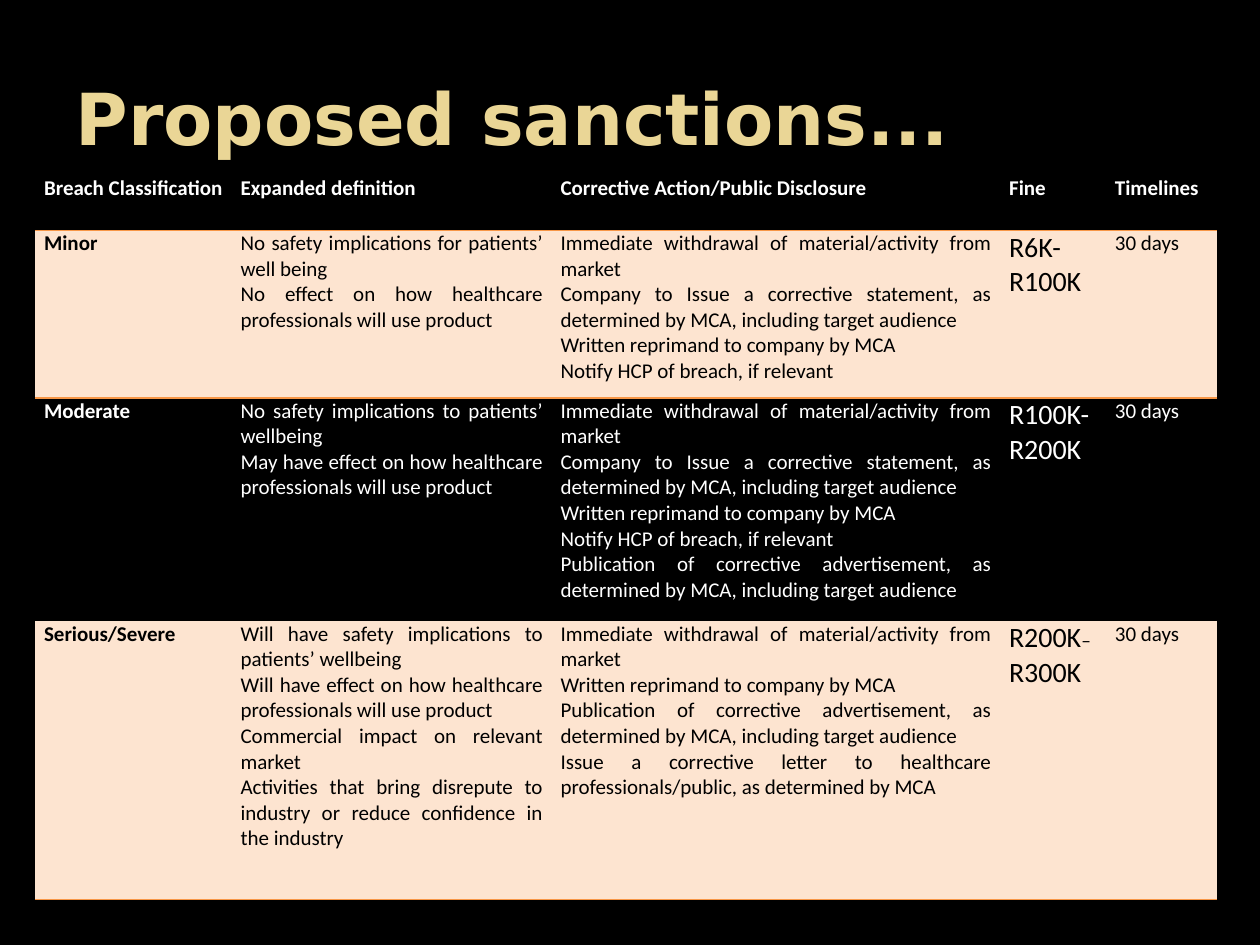
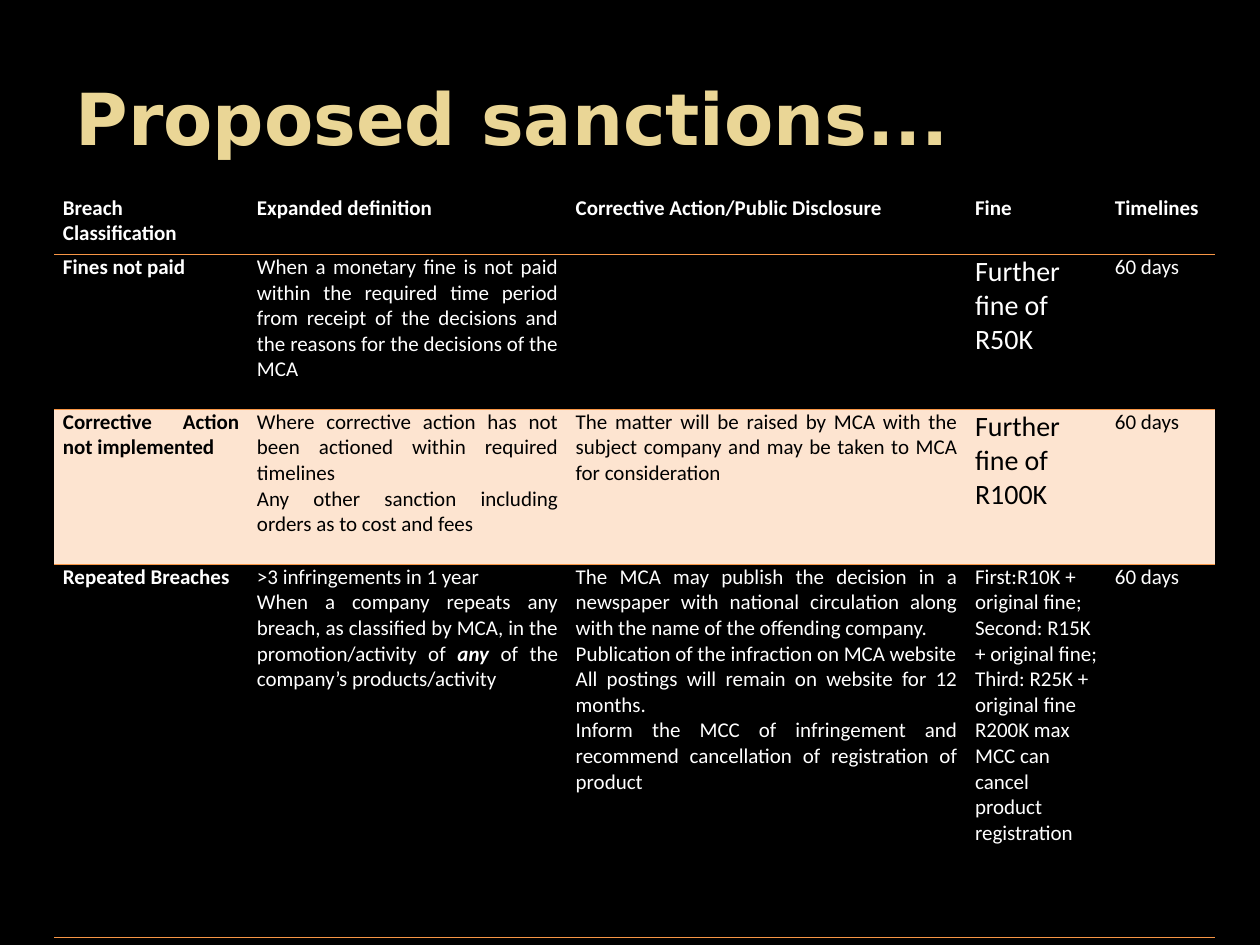
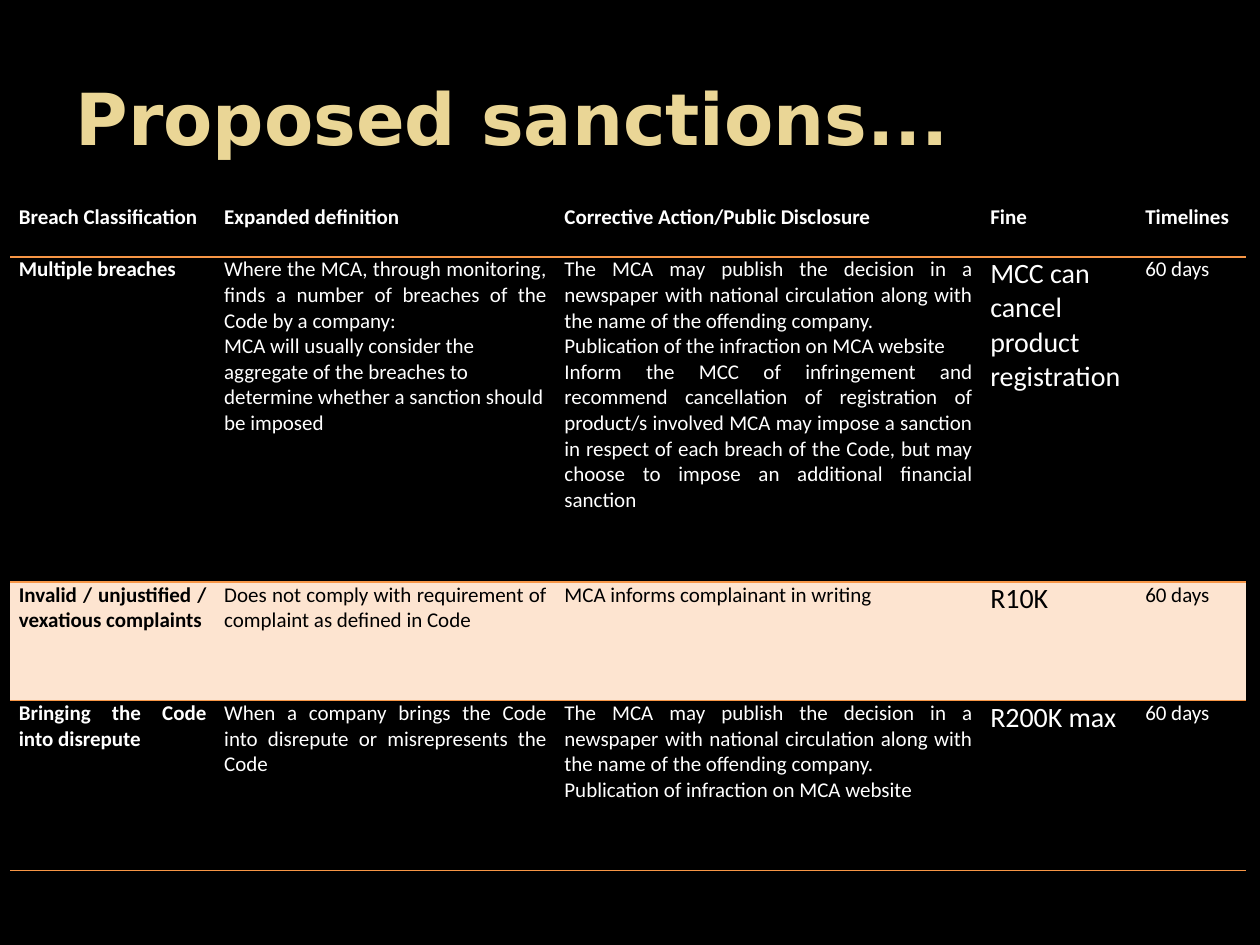
from dataclasses import dataclass
from pptx import Presentation as Deck
from pptx.dml.color import RGBColor as Rgb
from pptx.enum.text import MSO_ANCHOR as Anchor, MSO_AUTO_SIZE as Fit, PP_ALIGN as Align
from pptx.oxml import parse_xml as to_xml
from pptx.oxml.ns import nsdecls
from pptx.util import Inches, Pt

BLACK = Rgb(0x00, 0x00, 0x00)
WHITE = Rgb(0xFF, 0xFF, 0xFF)
GOLD = Rgb(0xEA, 0xD6, 0x96)
PEACH = Rgb(0xFD, 0xE4, 0xD0)
ORANGE = Rgb(0xF7, 0x96, 0x46)
PLAIN = "{2D5ABB26-0587-4C30-8999-92F81FD0307C}"
FINE = 3


@dataclass
class Para:
    runs: list
    align: Align = Align.JUSTIFY


def put(obj, form):
    for key, value in form.items():
        setattr(obj, key, value)


class Style:
    head = dict(name="DejaVu Sans", size=Pt(41), bold=True)
    body = dict(name="Calibri", size=Pt(12), bold=False)
    inset = dict(margin_left=Inches(0.07), margin_right=Inches(0.07),
                 margin_top=0, margin_bottom=0)

    def __init__(self):
        self.deck = Deck()
        put(self.deck, dict(slide_width=Inches(10), slide_height=Inches(7.5)))
        self.slide = None

    def page(self, text):
        self.slide = self.deck.slides.add_slide(self.deck.slide_layouts[5])
        back = self.slide.background.fill
        back.solid()
        back.fore_color.rgb = BLACK
        title = self.slide.shapes.title
        put(title, dict(left=Inches(0.5), top=Inches(0.3),
                        width=Inches(9), height=Inches(1.25)))
        frame = title.text_frame
        put(frame, dict(vertical_anchor=Anchor.MIDDLE, auto_size=Fit.NONE, word_wrap=True))
        para = frame.paragraphs[0]
        para.alignment = Align.LEFT
        self.run(para, text, self.head, GOLD)

    def run(self, para, text, form, tint):
        run = para.add_run()
        run.text = text
        put(run.font, form)
        run.font.color.rgb = tint

    def rule(self, cell, side):
        line = to_xml(
            f'<a:{side} {nsdecls("a")} w="12700"><a:solidFill>'
            f'<a:srgbClr val="{ORANGE}"/></a:solidFill></a:{side}>')
        cell._tc.get_or_add_tcPr().insert(0, line)

    def fill(self, cell, paras, form, align, tint):
        frame = cell.text_frame
        for num, item in enumerate(paras):
            if isinstance(item, str):
                item = Para([(item, {})], align)
            para = frame.add_paragraph() if num else frame.paragraphs[0]
            para.alignment = item.align
            for text, extra in item.runs:
                self.run(para, text, {**form, **extra}, tint)

    def table(self, left, top, cols, rows, data, bands, rules):
        frame = self.slide.shapes.add_table(
            len(rows), len(cols), Inches(left), Inches(top),
            Inches(sum(cols)), Inches(sum(rows)))
        grid = frame.table
        put(grid, dict(first_row=False, horz_banding=False))
        grid._tbl.tblPr[0].text = PLAIN
        for col, size in zip(grid.columns, cols):
            col.width = Inches(size)
        for row, size in zip(grid.rows, rows):
            row.height = Inches(size)
        for r, texts in enumerate(data):
            for c, paras in enumerate(texts):
                cell = grid.cell(r, c)
                put(cell, self.inset)
                if r in bands:
                    cell.fill.solid()
                    cell.fill.fore_color.rgb = PEACH
                else:
                    cell.fill.background()
                form = {**self.body, "bold": r == 0 or c == 0}
                if r and c == FINE:
                    form["size"] = Pt(16)
                self.fill(cell, paras, form,
                          Align.LEFT if c == FINE else Align.JUSTIFY,
                          BLACK if r in bands else WHITE)
                for edge, side in ((r + 1, "lnB"), (r, "lnT")):
                    if edge in rules:
                        self.rule(cell, side)


TITLE = "Proposed sanctions..."
HEAD = [["Breach Classification"], ["Expanded definition"],
        ["Corrective Action/Public Disclosure"], ["Fine"], ["Timelines"]]
MONTH = ["30 days"]
TERM = ["60 days"]
RECALL = "Immediate withdrawal of material/activity from market"
AMEND = ("Company to Issue a corrective statement, as determined by MCA, "
         "including target audience")
WARN = "Written reprimand to company by MCA"
NOTIFY = "Notify HCP of breach, if relevant"
ADVERT = ("Publication of corrective advertisement, as determined by MCA, "
          "including target audience")
PRESS = ("The MCA may publish the decision in a newspaper with national circulation "
         "along with the name of the offending company.")
SITE = "Publication of the infraction on MCA website"
CANCEL = "MCC can cancel product registration"
INFORM = "Inform the MCC of infringement and recommend cancellation of registration of product"
SMALL = dict(size=Pt(12))

LEVELS = [
    HEAD,
    [["Minor"],
     ["No safety implications for patients’ well being",
      "No effect on how healthcare professionals will use product"],
     [RECALL, AMEND, WARN, NOTIFY],
     ["R6K-R100K"], MONTH],
    [["Moderate"],
     ["No safety implications to patients’ wellbeing",
      "May have effect on how healthcare professionals will use product"],
     [RECALL, AMEND, WARN, NOTIFY, ADVERT],
     ["R100K-R200K"], MONTH],
    [["Serious/Severe"],
     ["Will have safety implications to patients’ wellbeing",
      "Will have effect on how healthcare professionals will use product",
      "Commercial impact on relevant market",
      "Activities that bring disrepute to industry or reduce confidence in the industry"],
     [RECALL, WARN, ADVERT,
      "Issue a corrective letter to healthcare professionals/public, as determined by MCA"],
     [Para([("R200K", {}), ("– ", dict(size=Pt(11))), ("R300K", {})], Align.LEFT)],
     MONTH],
]

REPEATS = [
    HEAD,
    [["Fines not paid"],
     ["When a monetary fine is not paid within the required time period from receipt "
      "of the decisions and the reasons for the decisions of the MCA"],
     [], ["Further fine of R50K"], TERM],
    [["Corrective Action not implemented"],
     ["Where corrective action has not been actioned within required timelines",
      "Any other sanction including orders as to cost and fees"],
     ["The matter will be raised by MCA with the subject company and may be taken "
      "to MCA for consideration"],
     ["Further fine of R100K"], TERM],
    [["Repeated Breaches"],
     [">3 infringements in 1 year",
      Para([("When a company repeats any breach, as classified by MCA, in the "
             "promotion/activity of ", {}),
            ("any", dict(bold=True, italic=True)),
            (" of the company’s products/activity", {})])],
     [PRESS + " ", SITE, "All postings will remain on website for 12 months. ", INFORM],
     [Para([("First:R10K + original fine; Second: R15K + original fine; "
             "Third: R25K + original fine R200K max", SMALL)], Align.LEFT),
      Para([(CANCEL, SMALL)], Align.LEFT)],
     TERM],
]

OTHERS = [
    HEAD,
    [["Multiple breaches"],
     ["Where the MCA, through monitoring, finds a number of breaches of the Code "
      "by a company:",
      Para([("MCA will usually consider the aggregate of the breaches to determine "
             "whether a sanction should be imposed", {})], Align.LEFT)],
     [PRESS + " ", SITE,
      INFORM + "/s involved MCA may impose a sanction in respect of each breach of the "
      "Code, but may choose to impose an additional financial sanction"],
     [CANCEL], TERM],
    [["Invalid / unjustified / vexatious complaints"],
     ["Does not comply with requirement of complaint as defined in Code"],
     ["MCA informs complainant in writing"],
     ["R10K"], TERM],
    [["Bringing the Code into disrepute"],
     ["When a company brings the Code into disrepute or misrepresents the Code"],
     [PRESS, "Publication of infraction on MCA website"],
     ["R200K max"], TERM],
]

PAGES = [
    dict(left=0.28, top=1.39, cols=[1.56, 2.54, 3.56, 0.84, 0.88],
         rows=[0.44, 1.33, 1.77, 2.21], data=LEVELS, bands={1, 3}, rules={1, 4}),
    dict(left=0.43, top=1.55, cols=[1.54, 2.53, 3.17, 1.11, 0.86],
         rows=[0.47, 1.23, 1.23, 2.96], data=REPEATS, bands={2}, rules={1, 2, 4}),
    dict(left=0.08, top=1.62, cols=[1.63, 2.7, 3.38, 1.23, 0.87],
         rows=[0.42, 2.58, 0.94, 1.35], data=OTHERS, bands={2}, rules={1, 2, 4}),
]


def main():
    style = Style()
    for page in PAGES:
        style.page(TITLE)
        style.table(**page)
    style.deck.save("out.pptx")


if __name__ == "__main__":
    main()
